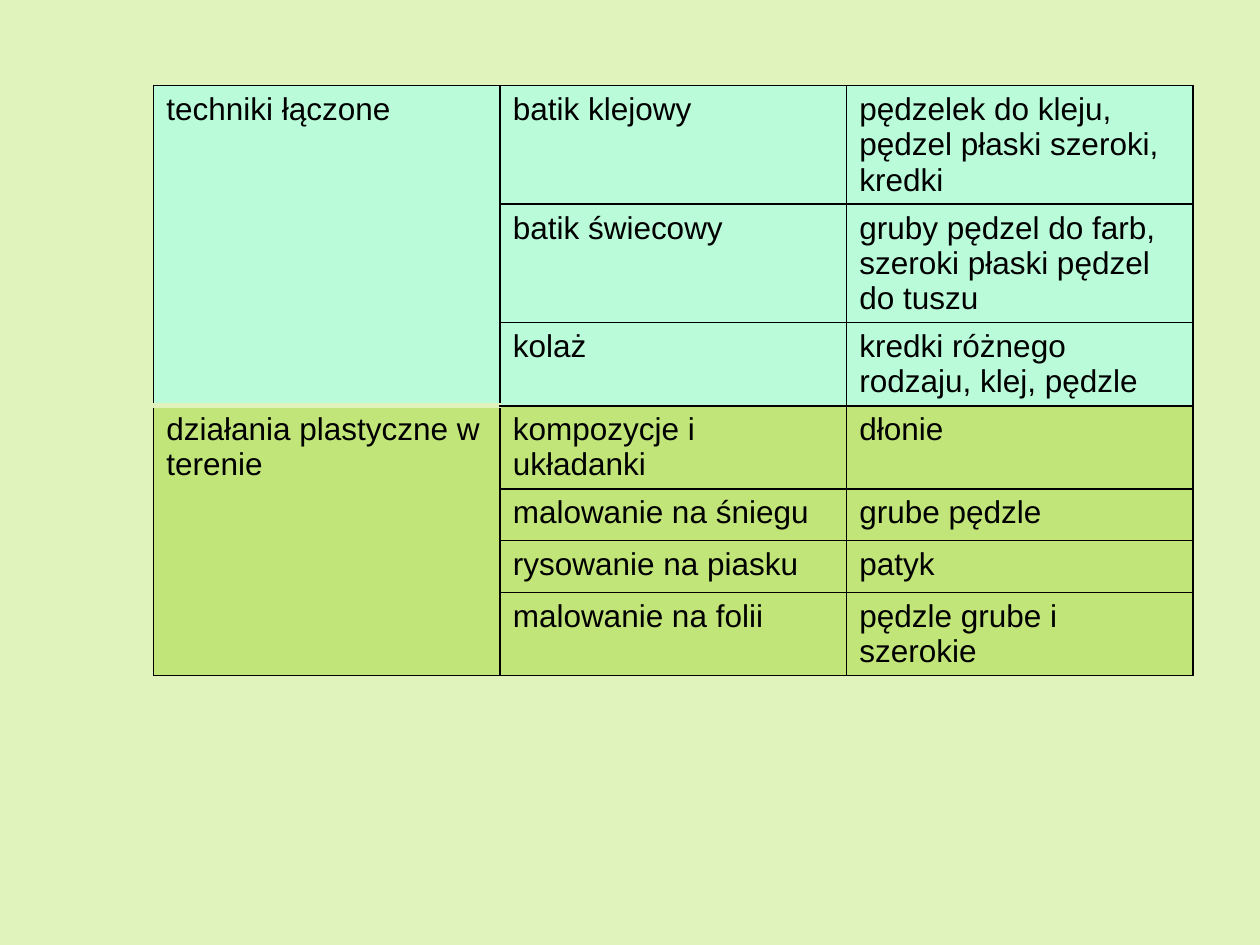
import dataclasses
import typing

import lxml.etree
import pptx
import pptx.dml.color
import pptx.oxml.ns
import pptx.util

Inches = pptx.util.Inches


@dataclasses.dataclass(frozen=True)
class Theme:
    back: str = "E1F3BC"
    ink: str = "000000"
    mint: str = "BAFCDA"
    lime: str = "C1E578"
    font: str = "Arial"
    size: int = 18
    thin: int = 1
    thick: int = 3


class Edge(typing.NamedTuple):
    color: str
    width: float


class Group(typing.NamedTuple):
    title: str
    fill: str
    rows: list[tuple[str, str]]
    top: Edge
    base: Edge


THEME = Theme()
LINE = Edge(THEME.ink, THEME.thin)
GROUPS = [
    Group("techniki łączone", THEME.mint, [
        ("batik klejowy", "pędzelek do kleju, pędzel płaski szeroki, kredki"),
        ("batik świecowy", "gruby pędzel do farb, szeroki płaski pędzel do tuszu"),
        ("kolaż", "kredki różnego rodzaju, klej, pędzle"),
    ], LINE, Edge(THEME.back, THEME.thick)),
    Group("działania plastyczne w terenie", THEME.lime, [
        ("kompozycje i układanki", "dłonie"),
        ("malowanie na śniegu", "grube pędzle"),
        ("rysowanie na piasku", "patyk"),
        ("malowanie na folii", "pędzle grube i szerokie"),
    ], Edge(THEME.back, THEME.thin), LINE),
]


def paint(fill, color: str) -> None:
    fill.solid()
    fill.fore_color.rgb = pptx.dml.color.RGBColor.from_string(color)


def write(cell, text: str, *, size: int = THEME.size,
          font: str = THEME.font, color: str = THEME.ink) -> None:
    run = cell.text_frame.paragraphs[0].add_run()
    run.text = text
    run.font.size = pptx.util.Pt(size)
    run.font.name = font
    run.font.color.rgb = pptx.dml.color.RGBColor.from_string(color)


def frame(cell, top: Edge = LINE, base: Edge = LINE) -> None:
    props = cell._tc.get_or_add_tcPr()
    qn = pptx.oxml.ns.qn
    edges = {"lnL": LINE, "lnR": LINE, "lnT": top, "lnB": base}
    for spot, (tag, edge) in enumerate(edges.items()):
        line = lxml.etree.Element(qn(f"a:{tag}"), w=str(pptx.util.Pt(edge.width)))
        fill = lxml.etree.SubElement(line, qn("a:solidFill"))
        lxml.etree.SubElement(fill, qn("a:srgbClr"), val=edge.color)
        props.insert(spot, line)


def draw(table, group: Group, start: int) -> int:
    end = start + len(group.rows)
    for row, texts in enumerate(group.rows, start):
        for col in range(3):
            cell = table.cell(row, col)
            paint(cell.fill, group.fill)
            if col:
                frame(cell)
                write(cell, texts[col - 1])
            else:
                frame(cell, group.top if row == start else LINE, group.base)
    head = table.cell(start, 0)
    head.merge(table.cell(end - 1, 0))
    write(head, group.title)
    return end


def main() -> None:
    deck = pptx.Presentation()
    deck.slide_width, deck.slide_height = Inches(10), Inches(7.5)
    slide = deck.slides.add_slide(deck.slide_layouts[6])
    paint(slide.background.fill, THEME.back)
    count = sum(len(group.rows) for group in GROUPS)
    shape = slide.shapes.add_table(
        count, 3, Inches(1.22), Inches(0.68), Inches(8.25), Inches(4.91))
    table = shape.table
    table.first_row = table.horz_banding = False
    for row in table.rows:
        row.height = Inches(0.41)
    shape.height = Inches(4.91)
    start = 0
    for group in GROUPS:
        start = draw(table, group, start)
    deck.save("out.pptx")


if __name__ == "__main__":
    main()
